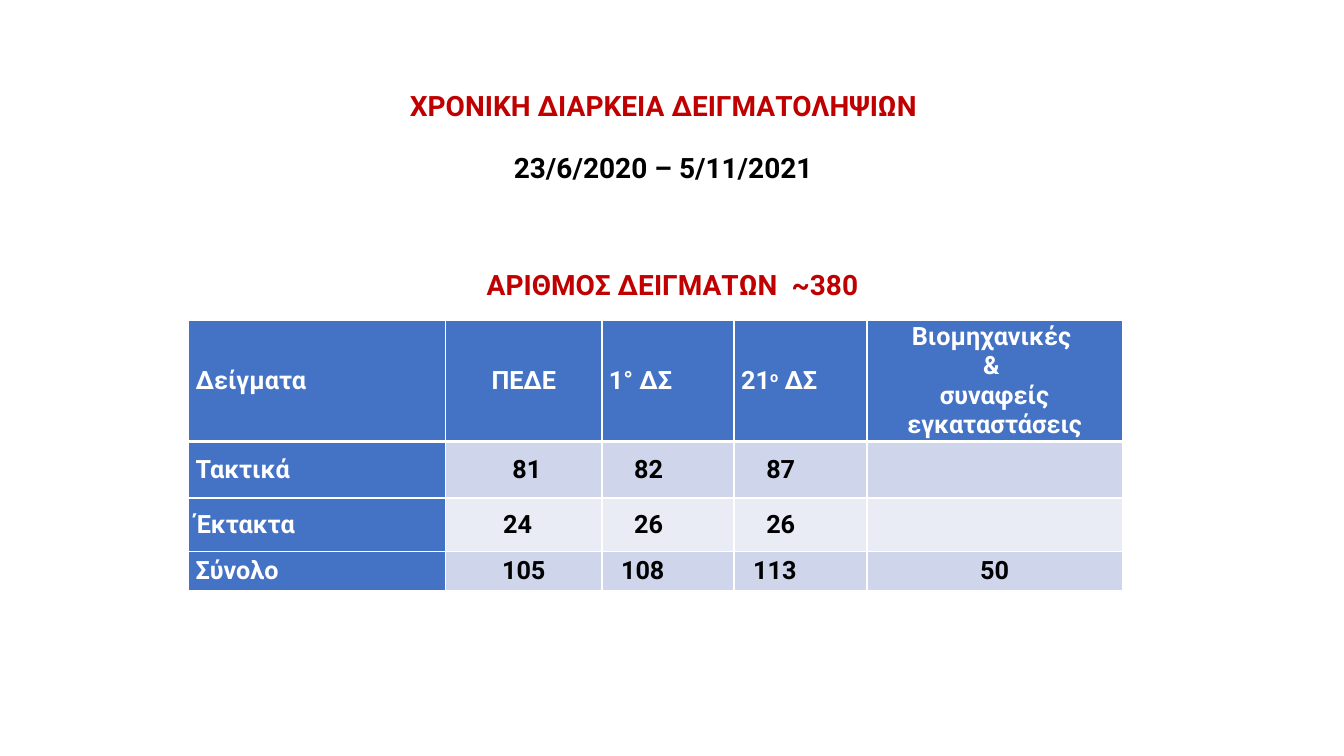
from lxml import etree
from pptx import Presentation
from pptx.dml.color import RGBColor
from pptx.enum.text import MSO_ANCHOR, PP_ALIGN
from pptx.oxml.ns import qn
from pptx.util import Inches, Pt

MID = MSO_ANCHOR.MIDDLE
LEFT, MEAN = PP_ALIGN.LEFT, PP_ALIGN.CENTER
INK = {"red": "C00000", "black": "000000", "white": "FFFFFF",
       "blue": "4472C4", "dark": "CFD5EA", "light": "E9EBF5"}


class Deck:
    """Style and current slide; lengths are percent shares of the slide."""

    font = "Roboto"

    def __init__(self):
        self.show = Presentation()
        self.show.slide_width = Inches(13.33)
        self.show.slide_height = Inches(7.5)
        self.slide = self.show.slides.add_slide(self.show.slide_layouts[6])

    def wide(self, share):
        return round(self.show.slide_width * share / 100)

    def high(self, share):
        return round(self.show.slide_height * share / 100)

    def box(self, x, y, w, h):
        return self.wide(x), self.high(y), self.wide(w), self.high(h)

    def run(self, para, text, size, ink, **marks):
        run = para.add_run()
        run.text = text
        font = run.font
        font.name, font.size, font.bold = self.font, Pt(size), True
        font.color.rgb = RGBColor.from_string(INK[ink])
        for name, value in marks.items():
            font._element.set(name, value)

    def lines(self, frame, paras, size, align):
        for i, runs in enumerate(paras):
            para = frame.paragraphs[0] if i == 0 else frame.add_paragraph()
            para.alignment = align
            for text, ink, marks in runs:
                self.run(para, text, size, ink, **marks)

    def text(self, spot, paras, before=0):
        frame = self.slide.shapes.add_textbox(*self.box(*spot)).text_frame
        frame.word_wrap = True
        self.lines(frame, paras, 20, MEAN)
        for para in frame.paragraphs:
            para.line_spacing = 1.07
            para.space_before, para.space_after = Pt(before), Pt(8)

    def edge(self, cell, side, width):
        props = cell._tc.get_or_add_tcPr()
        line = etree.SubElement(props, qn("a:ln" + side), w=str(Pt(width)))
        fill = etree.SubElement(line, qn("a:solidFill"))
        etree.SubElement(fill, qn("a:srgbClr"), val=INK["white"])

    def cell(self, cell, paras, fill, align, pad, base):
        cell.vertical_anchor = MID
        cell.margin_left, cell.margin_right = Inches(pad), Inches(0.07)
        cell.margin_top = cell.margin_bottom = 0
        for side, width in zip("LRTB", (1, 1, 1, base)):
            self.edge(cell, side, width)
        cell.fill.solid()
        cell.fill.fore_color.rgb = RGBColor.from_string(INK[fill])
        self.lines(cell.text_frame, paras, 18, align)

    def table(self, x, y, cols, rows, data):
        spot = self.box(x, y, sum(cols), sum(rows))
        grid = self.slide.shapes.add_table(len(rows), len(cols), *spot).table
        for col, share in zip(grid.columns, cols):
            col.width = self.wide(share)
        for row, share in zip(grid.rows, rows):
            row.height = self.high(share)
        for r, row in enumerate(data):
            for c, (paras, align, pad) in enumerate(row):
                head = r == 0 or c == 0
                fill = "blue" if head else "dark" if r % 2 else "light"
                edge = 3 if r == 0 or (r == 1 and c < 0) else 1
                self.cell(grid.cell(r, c), paras, fill, align, pad, edge)


def bit(text, ink="white", **marks):
    return text, ink, marks


def name(text, align=LEFT):
    return [[bit(text)]], align, 0.07


def count(text, align=LEFT, pad=0.07):
    return [[bit(text, "black")]], align, pad


def main():
    deck = Deck()
    deck.text((15.6, 10.8, 67.52, 14.27),
              [[bit("ΧΡΟΝΙΚΗ ΔΙΑΡΚΕΙΑ ΔΕΙΓΜΑΤΟΛΗΨΙΩΝ", "red")],
               [bit("23/6/2020 – 5/11/2021", "black")]], before=10)
    deck.text((31.28, 34.4, 37.51, 5.87),
              [[bit("ΑΡΙΘΜΟΣ ΔΕΙΓΜΑΤΩΝ", "red"),
                bit(" ", "red", spc="500"), bit("~380", "red")]])
    order = [[bit("21"), bit("ο", baseline="30000"), bit(" ΔΣ")]]
    plants = [[bit("Βιομηχανικές ")], [bit("& ")],
              [bit("συναφείς εγκαταστάσεις")]]
    blank = ([], LEFT, 0.07)
    data = [
        [name("Δείγματα"), name("ΠΕΔΕ", MEAN), name("1° ΔΣ"),
         (order, LEFT, 0.07), (plants, MEAN, 0.07)],
        [name("Τακτικά"), count("81", MEAN, 0.13),
         count("82", pad=0.32), count("87", pad=0.32), blank],
        [name("Έκτακτα"), count("24", pad=0.57),
         count("26", pad=0.32), count("26", pad=0.32), blank],
        [name("Σύνολο"), count("105", MEAN),
         count("108", pad=0.19), count("113", pad=0.19), count("50", MEAN)],
    ]
    deck.table(14.03, 42.4, (19.13, 11.63, 9.83, 9.9, 18.98),
               (16, 7.47, 7.07, 5.2), data)
    deck.show.save("out.pptx")


if __name__ == "__main__":
    main()
